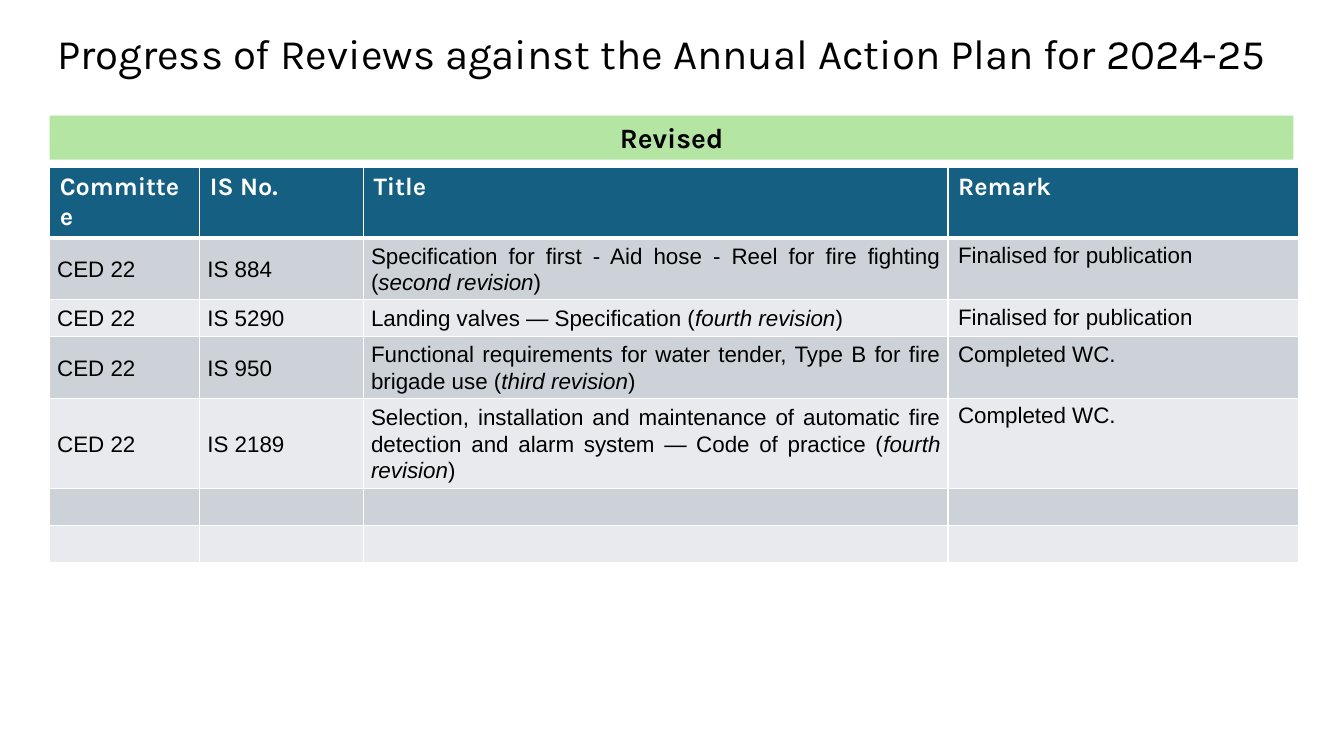
import pptx
import pptx.dml.color
import pptx.enum.shapes
import pptx.enum.text
import pptx.oxml.ns
import pptx.util
from lxml import etree

Pt = pptx.util.Pt
qn = pptx.oxml.ns.qn
ALIGN = pptx.enum.text.PP_ALIGN
ANCHOR = pptx.enum.text.MSO_ANCHOR

COLOURS = {
    "text": "000000",
    "white": "FFFFFF",
    "banner": "B4E5A2",
    "header": "156082",
    "odd_row": "CCD2D8",
    "even_row": "E8EAED",
}
COLUMN_WIDTHS = [107.3, 116.9, 417.5, 250.2]
ROW_HEIGHTS = [50.6, 43.9, 26.3, 43.9, 64.2, 26.3, 26.3]
HEADERS = ["Committee", "IS No.", "Title", "Remark"]
# Standard number, title, revision (set in italics), remark
REVIEWS = [
    ("IS 884", "Specification for first - Aid hose - Reel for fire fighting",
     "second revision", "Finalised for publication"),
    ("IS 5290", "Landing valves ― Specification",
     "fourth revision", "Finalised for publication"),
    ("IS 950", "Functional requirements for water tender, Type B for fire brigade use",
     "third revision", "Completed WC."),
    ("IS 2189", "Selection, installation and maintenance of automatic fire detection "
     "and alarm system ― Code of practice",
     "fourth revision", "Completed WC."),
]


def colour(name):
    return pptx.dml.color.RGBColor.from_string(COLOURS[name])


def add_run(paragraph, text, size, font="Arial", ink="text", bold=False, italic=False):
    run = paragraph.add_run()
    run.text = text
    run.font.name = font
    run.font.size = Pt(size)
    run.font.bold = bold
    run.font.italic = italic
    run.font.color.rgb = colour(ink)


def add_title(slide, text):
    box = slide.shapes.add_textbox(Pt(12.2), Pt(13.7), Pt(921.6), Pt(46))
    frame = box.text_frame
    frame.word_wrap = True
    frame.vertical_anchor = ANCHOR.BOTTOM
    paragraph = frame.paragraphs[0]
    paragraph.alignment = ALIGN.CENTER
    paragraph.line_spacing = 0.9
    add_run(paragraph, text, 30, "Karla")


def add_banner(slide, text):
    banner = slide.shapes.add_shape(
        pptx.enum.shapes.MSO_SHAPE.RECTANGLE, Pt(35.5), Pt(82.6), Pt(888.5), Pt(31.5))
    banner.shadow.inherit = False
    banner.fill.solid()
    banner.fill.fore_color.rgb = colour("banner")
    banner.line.fill.background()
    banner.text_frame.word_wrap = True
    paragraph = banner.text_frame.paragraphs[0]
    paragraph.alignment = ALIGN.CENTER
    add_run(paragraph, text, 20, "Karla", bold=True)


def style_cell(cell, fill, bottom_width=1, top_width=1):
    """Draw white borders and then the fill, in the order the schema asks for."""
    properties = cell._tc.get_or_add_tcPr()
    widths = {"a:lnL": 1, "a:lnR": 1, "a:lnT": top_width, "a:lnB": bottom_width}
    for tag, width in widths.items():
        line = etree.SubElement(properties, qn(tag), w=str(Pt(width)))
        solid = etree.SubElement(line, qn("a:solidFill"))
        etree.SubElement(solid, qn("a:srgbClr"), val=COLOURS["white"])
    cell.fill.solid()
    cell.fill.fore_color.rgb = colour(fill)


def write_compact_cell(cell, runs, alignment=None):
    """Write (text, italic) runs, centred vertically, with narrow margins."""
    cell.vertical_anchor = ANCHOR.MIDDLE
    cell.margin_left = cell.margin_right = Pt(5.4)
    cell.margin_top = cell.margin_bottom = Pt(1.5)
    paragraph = cell.text_frame.paragraphs[0]
    paragraph.alignment = alignment
    paragraph.line_spacing = 1.07
    for text, italic in runs:
        add_run(paragraph, text, 16, italic=italic)


def add_review_table(slide):
    table = slide.shapes.add_table(
        len(ROW_HEIGHTS), len(COLUMN_WIDTHS), Pt(35.5), Pt(119.6),
        Pt(sum(COLUMN_WIDTHS)), Pt(sum(ROW_HEIGHTS))).table
    for column, width in zip(table.columns, COLUMN_WIDTHS):
        column.width = Pt(width)
    for row, height in zip(table.rows, ROW_HEIGHTS):
        row.height = Pt(height)

    for cell, text in zip(table.rows[0].cells, HEADERS):
        style_cell(cell, "header", bottom_width=3)
        add_run(cell.text_frame.paragraphs[0], text, 18, "Karla", "white", bold=True)

    for index in range(1, len(ROW_HEIGHTS)):
        cells = list(table.rows[index].cells)
        for cell in cells:
            style_cell(cell, "odd_row" if index % 2 else "even_row",
                       top_width=3 if index == 1 else 1)
        if index <= len(REVIEWS):
            number, title, revision, remark = REVIEWS[index - 1]
            write_compact_cell(cells[0], [("CED 22", False)])
            write_compact_cell(cells[1], [(number, False)])
            write_compact_cell(
                cells[2], [(title + " (", False), (revision, True), (")", False)],
                ALIGN.JUSTIFY)
            add_run(cells[3].text_frame.paragraphs[0], remark, 16)
        else:
            for cell in cells:
                paragraph = cell.text_frame.paragraphs[0]
                etree.SubElement(paragraph._p, qn("a:endParaRPr"), sz="1600")


def main():
    presentation = pptx.Presentation()
    presentation.slide_width = Pt(960)
    presentation.slide_height = Pt(540)
    slide = presentation.slides.add_slide(presentation.slide_layouts[6])
    add_title(slide, "Progress of Reviews against the Annual Action Plan for 2024-25")
    add_banner(slide, "Revised")
    add_review_table(slide)
    presentation.save("out.pptx")


if __name__ == "__main__":
    main()
